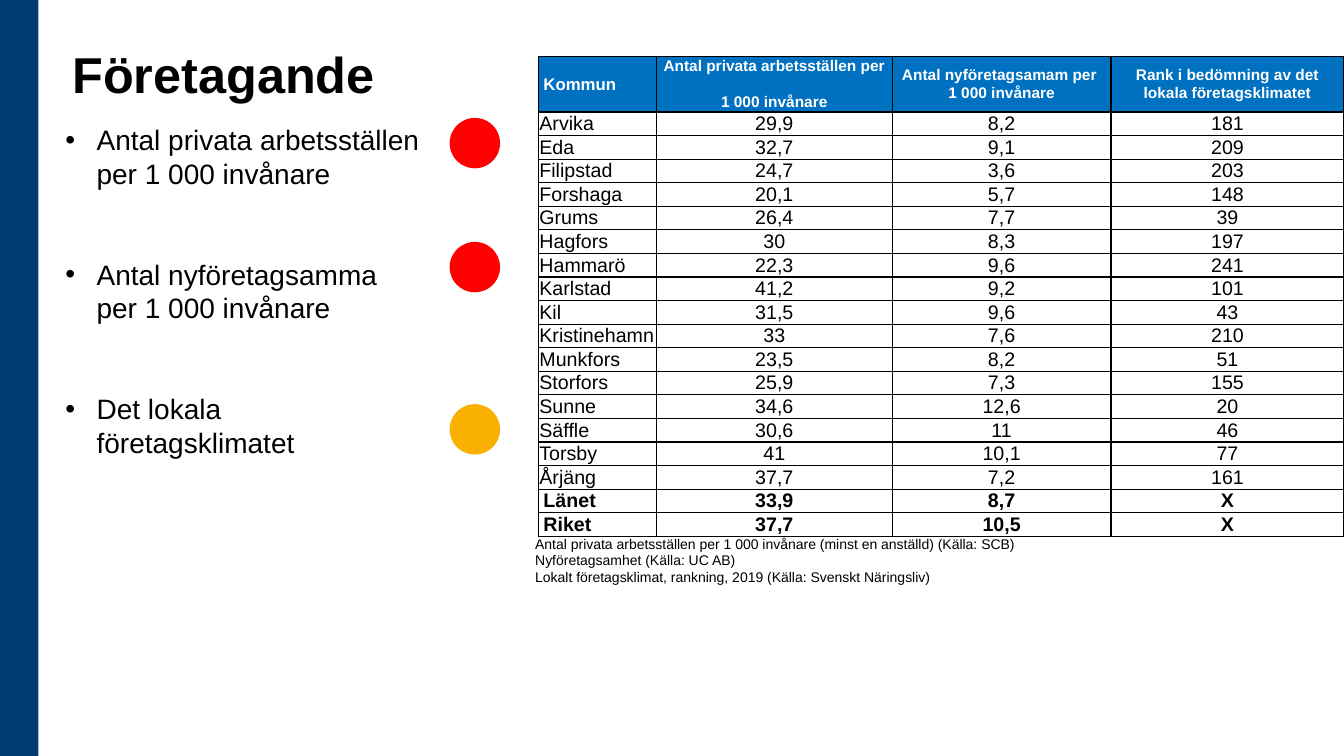
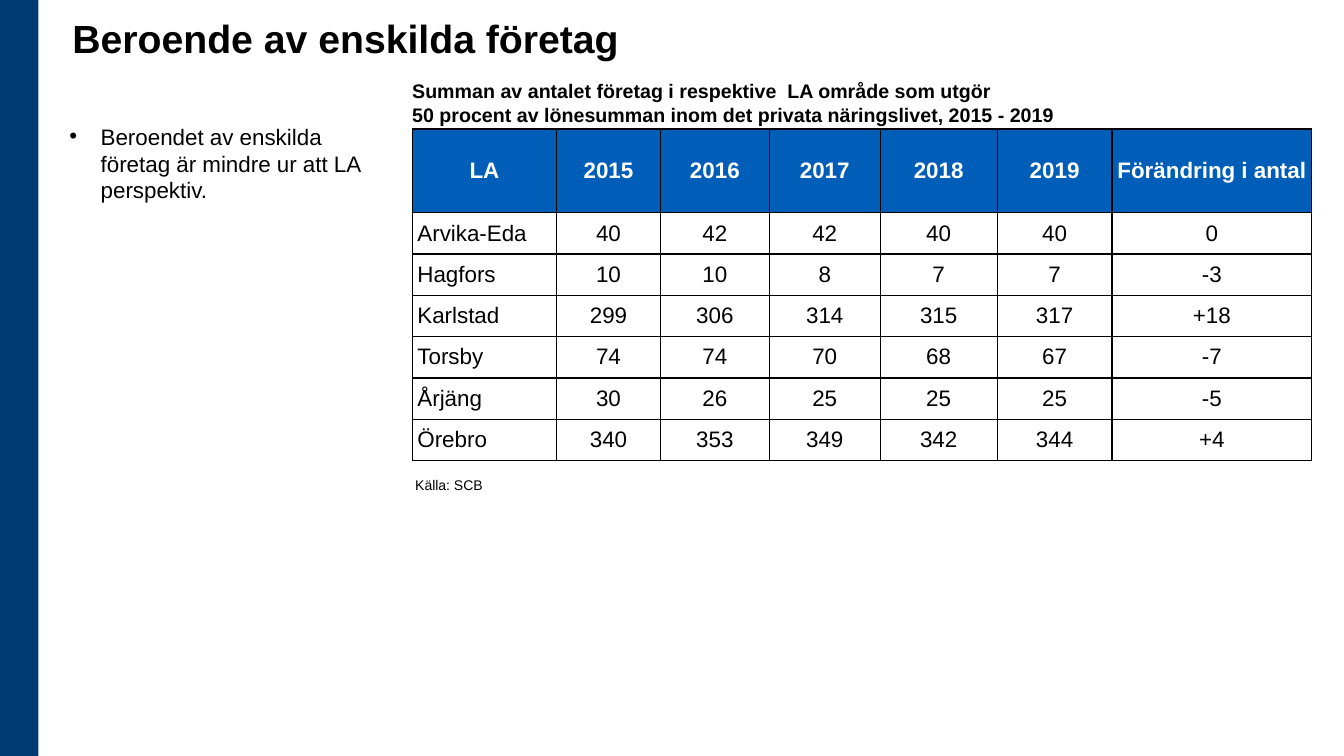
from dataclasses import dataclass

from lxml import etree
from pptx import Presentation
from pptx import util as u
from pptx.dml.color import RGBColor
from pptx.enum import shapes, text
from pptx.oxml.ns import qn

CENTER = text.PP_ALIGN.CENTER
MIDDLE, BOTTOM = text.MSO_ANCHOR.MIDDLE, text.MSO_ANCHOR.BOTTOM


@dataclass(frozen=True)
class Theme:
    font: str = "Arial"
    black: str = "000000"
    white: str = "FFFFFF"
    band: str = "003A70"
    header_blue: str = "0070C0"
    header_deep: str = "005EB8"
    red: str = "FF0000"
    amber: str = "F9B000"
    title: int = 36
    subtitle: int = 28
    bullet: int = 20
    body: int = 16
    cell: int = 14
    label: int = 12
    small_label: int = 11
    note: int = 10


THEME = Theme()

MUNICIPALITY_HEADER = [
    "Kommun",
    "Antal privata arbetsställen per \n1 000 invånare",
    "Antal nyföretagsamam per \n1 000 invånare",
    "Rank i bedömning av det lokala företagsklimatet",
]
MUNICIPALITIES = [
    ("Arvika", "29,9", "8,2", "181"),
    ("Eda", "32,7", "9,1", "209"),
    ("Filipstad", "24,7", "3,6", "203"),
    ("Forshaga", "20,1", "5,7", "148"),
    ("Grums", "26,4", "7,7", "39"),
    ("Hagfors", "30", "8,3", "197"),
    ("Hammarö", "22,3", "9,6", "241"),
    ("Karlstad", "41,2", "9,2", "101"),
    ("Kil", "31,5", "9,6", "43"),
    ("Kristinehamn", "33", "7,6", "210"),
    ("Munkfors", "23,5", "8,2", "51"),
    ("Storfors", "25,9", "7,3", "155"),
    ("Sunne", "34,6", "12,6", "20"),
    ("Säffle", "30,6", "11", "46"),
    ("Torsby", "41", "10,1", "77"),
    ("Årjäng", "37,7", "7,2", "161"),
]
TOTALS = [("Länet", "33,9", "8,7", "X"), ("Riket", "37,7", "10,5", "X")]

REGION_HEADER = ["LA", "2015", "2016", "2017", "2018", "2019", "Förändring i antal"]
REGIONS = [
    ("Arvika-Eda", "40", "42", "42", "40", "40", "0"),
    ("Hagfors", "10", "10", "8", "7", "7", "-3"),
    ("Karlstad", "299", "306", "314", "315", "317", "+18"),
    ("Torsby", "74", "74", "70", "68", "67", "-7"),
    ("Årjäng", "30", "26", "25", "25", "25", "-5"),
    ("Örebro", "340", "353", "349", "342", "344", "+4"),
]


def rgb(color):
    return RGBColor.from_string(color)


# Text
def write(para, words, size, color=THEME.black, bold=False, align=None,
          bullet=False, before=0, spacing=None):
    """Fill a paragraph; a newline in the words is a line break."""
    para.text = words
    para.alignment = align
    if before:
        para.space_before = u.Pt(before)
    if spacing:
        para.line_spacing = spacing
    if bullet:
        props = para._p.get_or_add_pPr()
        indent = u.Inches(0.31)
        props.set("marL", str(indent))
        props.set("indent", str(-indent))
        etree.SubElement(props, qn("a:buFont"), typeface=THEME.font)
        etree.SubElement(props, qn("a:buChar"), char="•")
    for line_break in para._p.findall(qn("a:br")):
        etree.SubElement(line_break, qn("a:rPr"), sz=str(size * 100))
    for span in para.runs:
        span.font.name = THEME.font
        span.font.size = u.Pt(size)
        span.font.bold = bold
        span.font.color.rgb = rgb(color)


def add_text(page, left, top, width, height, paragraphs, size, anchor=None,
             gap=0, **style):
    box = page.shapes.add_textbox(*map(u.Inches, (left, top, width, height)))
    frame = box.text_frame
    frame.word_wrap = True
    frame.vertical_anchor = anchor
    for index, words in enumerate(paragraphs):
        para = frame.add_paragraph() if index else frame.paragraphs[0]
        write(para, words, size, before=gap if index else 0, **style)


def add_title(page, words, size, top, width):
    add_text(page, 0.62, top, width, 0.78, [words], size, anchor=BOTTOM, bold=True)


# Shapes
def add_shape(page, kind, left, top, width, height, color):
    shape = page.shapes.add_shape(kind, *map(u.Inches, (left, top, width, height)))
    shape.shadow.inherit = False
    shape.fill.solid()
    shape.fill.fore_color.rgb = rgb(color)
    shape.line.fill.background()


def add_page(deck):
    page = deck.slides.add_slide(deck.slide_layouts[6])
    add_shape(page, shapes.MSO_SHAPE.RECTANGLE, 0, 0, 0.38, 7.5, THEME.band)
    return page


# Tables
def add_grid(page, left, top, widths, heights):
    frame = page.shapes.add_table(
        len(heights), len(widths), u.Inches(left), u.Inches(top),
        u.Inches(sum(widths)), u.Inches(sum(heights)))
    grid = frame.table
    grid.first_row = grid.horz_banding = False
    for column, width in zip(grid.columns, widths):
        column.width = u.Inches(width)
    for row, height in zip(grid.rows, heights):
        row.height = u.Inches(height)
    return grid


def add_borders(cell):
    props = cell._tc.get_or_add_tcPr()
    for index, side in enumerate(("lnL", "lnR", "lnT", "lnB")):
        line = etree.Element(qn(f"a:{side}"), w=str(u.Pt(1)))
        fill = etree.SubElement(line, qn("a:solidFill"))
        etree.SubElement(fill, qn("a:srgbClr"), val=THEME.black)
        props.insert(index, line)


def fill_row(grid, row, values, sizes, margin=0.05, fill=None, center_first=False,
             **style):
    for column, (words, size) in enumerate(zip(values, sizes)):
        cell = grid.cell(row, column)
        cell.margin_left = cell.margin_right = u.Inches(margin)
        cell.margin_top = cell.margin_bottom = 0
        cell.vertical_anchor = MIDDLE
        if fill:
            cell.fill.solid()
            cell.fill.fore_color.rgb = rgb(fill)
        else:
            cell.fill.background()
        add_borders(cell)
        align = CENTER if column or center_first else None
        write(cell.text_frame.paragraphs[0], words, size, align=align, **style)


# Slides
def build_enterprise(deck):
    page = add_page(deck)
    add_title(page, "Företagande", THEME.title, 0.3, 3.21)

    heights = [0.37] + [0.226] * len(MUNICIPALITIES) + [0.23] * len(TOTALS)
    grid = add_grid(page, 5.34, 0.56, [1.17, 2.34, 2.17, 2.31], heights)
    fill_row(grid, 0, MUNICIPALITY_HEADER, [THEME.label] + [THEME.small_label] * 3,
             fill=THEME.header_blue, color=THEME.white, bold=True)
    sizes = [THEME.cell] * 4
    for row, values in enumerate(MUNICIPALITIES, 1):
        fill_row(grid, row, values, sizes, margin=0.01)
    for row, values in enumerate(TOTALS, 1 + len(MUNICIPALITIES)):
        fill_row(grid, row, values, sizes, bold=True)

    add_text(page, 5.21, 5.26, 5.05, 0.65, [
        "Antal privata arbetsställen per 1 000 invånare (minst en anställd) (Källa: SCB)\n"
        "Nyföretagsamhet (Källa: UC AB)\n"
        "Lokalt företagsklimat, rankning, 2019 (Källa: Svenskt Näringsliv)",
    ], THEME.note)
    add_text(page, 0.55, 1.17, 4.44, 3.77, [
        "Antal privata arbetsställen\nper 1 000 invånare",
        "Antal nyföretagsamma \nper 1 000 invånare",
        "Det lokala \nföretagsklimatet",
    ], THEME.bullet, gap=48, bullet=True)

    # Status lights
    for top, color in ((1.17, THEME.red), (2.4, THEME.red), (4.01, THEME.amber)):
        add_shape(page, shapes.MSO_SHAPE.FLOWCHART_CONNECTOR, 4.46, top, 0.5, 0.5, color)


def build_dependence(deck):
    page = add_page(deck)
    add_text(page, 4.02, 4.67, 1.74, 0.27, ["Källa: SCB"], THEME.note, spacing=1.07)
    add_title(page, "Beroende av enskilda företag", THEME.subtitle, -0.12, 6.05)
    add_text(page, 3.99, 0.74, 9.34, 0.56, [
        "Summan av antalet företag i respektive  LA område som utgör \n"
        "50 procent av lönesumman inom det privata näringslivet, 2015 - 2019",
    ], THEME.cell, anchor=BOTTOM, bold=True)
    add_text(page, 0.59, 1.17, 3.42, 2.63, [
        "Beroendet av enskilda företag är mindre ur att LA perspektiv.",
    ], THEME.body, bullet=True)

    grid = add_grid(page, 4.09, 1.28, [1.43, 1.03, 1.08, 1.1, 1.16, 1.14, 1.98],
                    [0.83] + [0.41] * len(REGIONS))
    sizes = [THEME.body] * len(REGION_HEADER)
    fill_row(grid, 0, REGION_HEADER, sizes, fill=THEME.header_deep,
             color=THEME.white, bold=True, center_first=True)
    for row, values in enumerate(REGIONS, 1):
        fill_row(grid, row, values, sizes)


def main():
    deck = Presentation()
    deck.slide_width, deck.slide_height = u.Inches(13.33), u.Inches(7.5)
    build_enterprise(deck)
    build_dependence(deck)
    deck.save("out.pptx")


if __name__ == "__main__":
    main()
